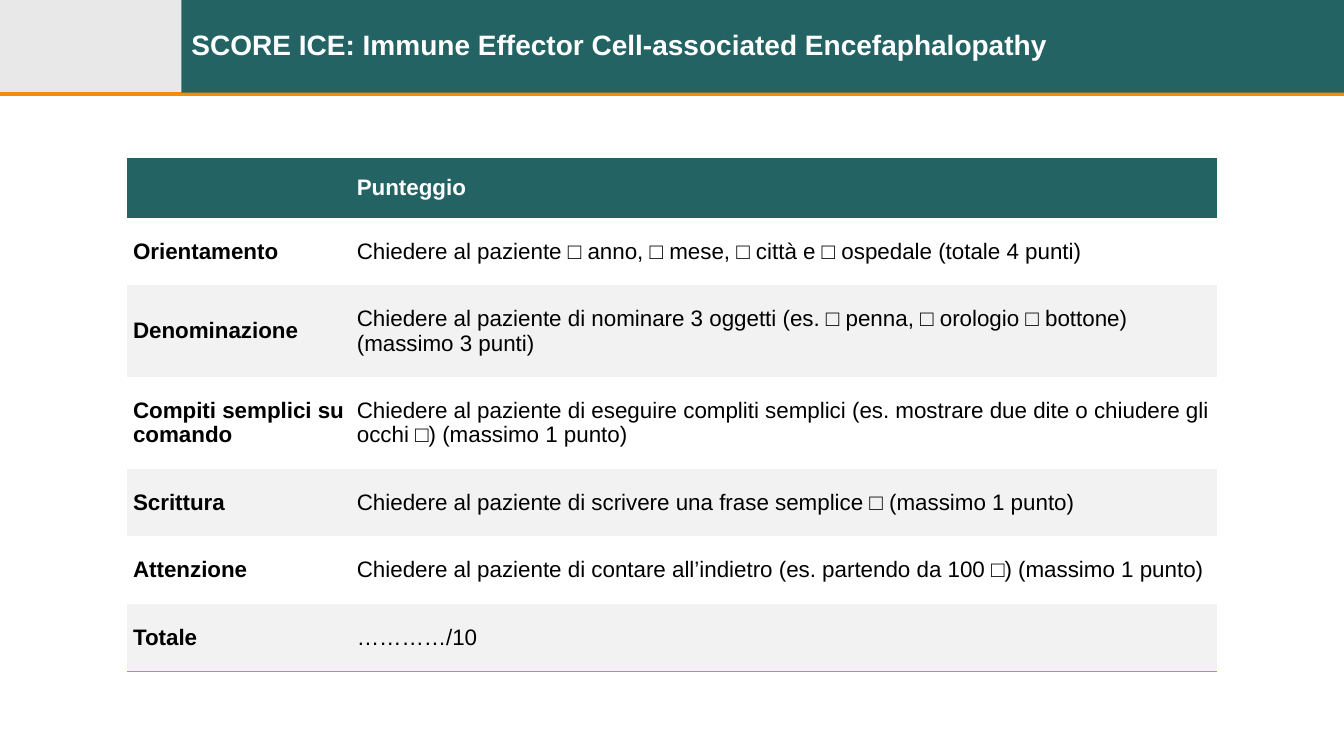
from lxml import etree
from pptx import Presentation
from pptx.dml.color import RGBColor
from pptx.enum.shapes import MSO_CONNECTOR, MSO_SHAPE
from pptx.enum.text import MSO_ANCHOR, PP_ALIGN
from pptx.oxml.ns import qn
from pptx.util import Inches, Pt

RECTANGLE = MSO_SHAPE.RECTANGLE
STRAIGHT = MSO_CONNECTOR.STRAIGHT
MIDDLE = MSO_ANCHOR.MIDDLE
LEFT = PP_ALIGN.LEFT

WIDTH, HEIGHT = 13.33, 7.5
COLORS = {"teal": "236364", "orange": "F38D08", "grey": "E8E8E8",
          "band": "F2F2F2", "white": "FFFFFF", "black": "000000"}
PLAIN_TABLE_STYLE = "{2D5ABB26-0587-4C30-8999-92F81FD0307C}"

TITLE = "SCORE ICE: Immune Effector Cell-associated Encefaphalopathy"
COLUMN_WIDTHS = [2.22, 8.59]
SCORE_ROWS = [
    (0.59, "", "Punteggio"),
    (0.67, "Orientamento",
     "Chiedere al paziente □ anno, □ mese, □ città e □ ospedale (totale 4 punti)"),
    (0.91, "Denominazione",
     "Chiedere al paziente di nominare 3 oggetti (es. □ penna, □ orologio □ bottone) "
     "(massimo 3 punti)"),
    (0.91, "Compiti semplici su comando",
     "Chiedere al paziente di eseguire compliti semplici (es. mostrare due dite o "
     "chiudere gli occhi □) (massimo 1 punto)"),
    (0.67, "Scrittura",
     "Chiedere al paziente di scrivere una frase semplice □ (massimo 1 punto)"),
    (0.67, "Attenzione",
     "Chiedere al paziente di contare all’indietro (es. partendo da 100 □) "
     "(massimo 1 punto)"),
    (0.67, "Totale", "…………/10"),
]


def color(name):
    return RGBColor.from_string(COLORS[name])


def write(paragraph, text, size, color_name, bold):
    paragraph.alignment = LEFT
    paragraph.font.color.rgb = color(color_name)
    for name, value in {"name": "Arial", "size": Pt(size), "bold": bold}.items():
        setattr(paragraph.font, name, value)
    paragraph.add_run().text = text


def add_panel(slide, left, top, width, height, color_name):
    panel = slide.shapes.add_shape(
        RECTANGLE, Inches(left), Inches(top), Inches(width), Inches(height))
    panel.shadow.inherit = False
    panel.fill.solid()
    panel.fill.fore_color.rgb = color(color_name)
    panel.line.fill.background()
    return panel


def add_header(slide, left, top, width, height):
    logo_width = 0.135 * width
    add_panel(slide, left, top, logo_width, height, "grey")

    rule_y = Inches(top + height + 0.01)
    rule = slide.shapes.add_connector(
        STRAIGHT, Inches(left), rule_y, Inches(left + width), rule_y)
    rule.line.color.rgb = color("orange")
    rule.line.width = Pt(3)
    etree.SubElement(rule._element.spPr, qn("a:effectLst"))

    title_box = left + logo_width, top, width - logo_width, height
    add_panel(slide, *title_box, "teal")
    title = slide.shapes.add_textbox(*map(Inches, title_box)).text_frame
    title.word_wrap = True
    title.vertical_anchor = MIDDLE
    title.paragraphs[0].line_spacing = 0.9
    write(title.paragraphs[0], TITLE, 20, "white", True)


def add_bottom_border(cell):
    properties = cell._tc.get_or_add_tcPr()
    border = etree.Element(qn("a:lnB"), w=str(Pt(1)))
    fill = etree.SubElement(border, qn("a:solidFill"))
    etree.SubElement(fill, qn("a:srgbClr"), val=COLORS["orange"])
    properties.insert(0, border)


def fill_cell(cell, text, row, column):
    is_header = row == 0
    cell.vertical_anchor = MIDDLE
    margins = {"margin_left": 0.06, "margin_right": 0.06,
               "margin_top": 0, "margin_bottom": 0}
    for name, value in margins.items():
        setattr(cell, name, Inches(value))
    if is_header or row % 2 == 0:
        cell.fill.solid()
        cell.fill.fore_color.rgb = color("teal" if is_header else "band")
    else:
        cell.fill.background()
    if text:
        write(cell.text_frame.paragraphs[0], text, 16,
              "white" if is_header else "black", is_header or column == 0)


def add_score_table(slide, left, top):
    height = sum(row[0] for row in SCORE_ROWS)
    frame = slide.shapes.add_table(
        len(SCORE_ROWS), len(COLUMN_WIDTHS), Inches(left), Inches(top),
        Inches(sum(COLUMN_WIDTHS)), Inches(height))
    table = frame.table
    table._tbl.tblPr.find(qn("a:tableStyleId")).text = PLAIN_TABLE_STYLE
    table.horz_banding = False
    for column, width in zip(table.columns, COLUMN_WIDTHS):
        column.width = Inches(width)
    for row, (row_height, *texts) in enumerate(SCORE_ROWS):
        table.rows[row].height = Inches(row_height)
        for column, text in enumerate(texts):
            fill_cell(table.cell(row, column), text, row, column)
    for cell in table.rows[len(SCORE_ROWS) - 1].cells:
        add_bottom_border(cell)


def main():
    presentation = Presentation()
    presentation.slide_width = Inches(WIDTH)
    presentation.slide_height = Inches(HEIGHT)
    slide = presentation.slides.add_slide(presentation.slide_layouts[6])
    add_header(slide, 0, 0, WIDTH, 0.92)
    add_score_table(slide, (WIDTH - sum(COLUMN_WIDTHS)) / 2, 1.57)
    presentation.save("out.pptx")


if __name__ == "__main__":
    main()
